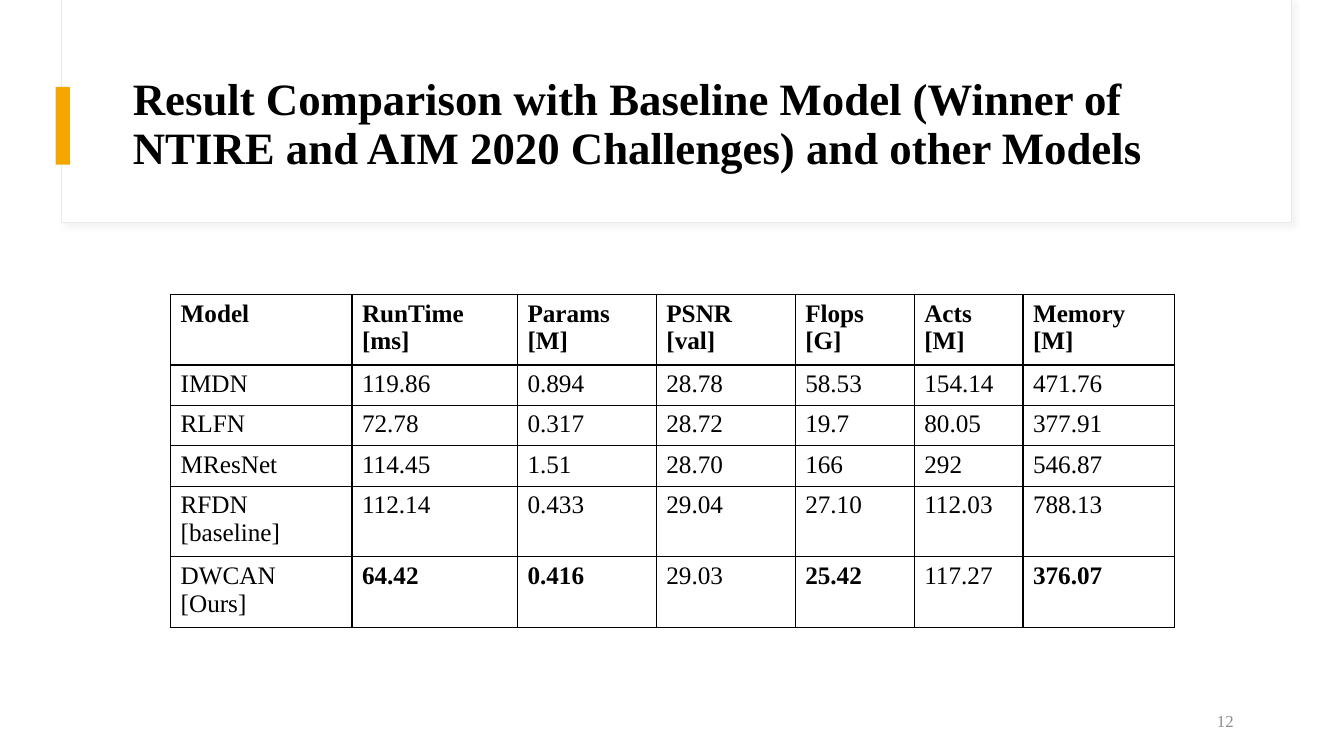
from lxml import etree
from pptx import Presentation
from pptx.dml.color import RGBColor
from pptx.enum.shapes import MSO_SHAPE as Shape
from pptx.enum.text import MSO_ANCHOR as Anchor, PP_ALIGN as Align
from pptx.oxml import parse_xml
from pptx.oxml.ns import nsdecls, qn
from pptx.util import Cm, Pt

# Content
TITLE = ("Result Comparison with Baseline Model (Winner of "
         "NTIRE and AIM 2020 Challenges) and other Models")
PAGE_NUMBER = "12"
RESULTS = [
    ("Model", "RunTime [ms]", "Params [M]", "PSNR [val]", "Flops [G]", "Acts [M]", "Memory [M]"),
    ("IMDN", "119.86", "0.894", "28.78", "58.53", "154.14", "471.76"),
    ("RLFN", "72.78", "0.317", "28.72", "19.7", "80.05", "377.91"),
    ("MResNet", "114.45", "1.51", "28.70", "166", "292", "546.87"),
    ("RFDN [baseline]", "112.14", "0.433", "29.04", "27.10", "112.03", "788.13"),
    ("DWCAN [Ours]", "64.42", "0.416", "29.03", "25.42", "117.27", "376.07"),
]
HIGHLIGHTS = {"64.42", "0.416", "25.42", "376.07"}
COLUMN_WIDTHS = (4.57, 4.17, 3.5, 3.5, 3, 2.74, 3.81)
ROW_HEIGHT = 0.79

FONT = "Times New Roman"
BLACK = RGBColor(0x00, 0x00, 0x00)
WHITE = RGBColor(0xFF, 0xFF, 0xFF)
AMBER = RGBColor(0xF5, 0xA7, 0x00)
PALE_GREY = RGBColor(0xE9, 0xE9, 0xE9)
GREY = RGBColor(0x8C, 0x8C, 0x8C)

PANEL_SHADOW = f"""<a:effectLst {nsdecls('a')}>
  <a:outerShdw blurRad="50800" dist="38100" dir="2700000" algn="tl" rotWithShape="0">
    <a:srgbClr val="D9D9D9"><a:alpha val="30000"/></a:srgbClr>
  </a:outerShdw></a:effectLst>"""


def set_font(paragraph, size, color=BLACK, bold=False):
    font = paragraph.font
    font.name, font.size, font.bold = FONT, Pt(size), bold
    font.color.rgb = color


def add_block(slide, box, fill):
    block = slide.shapes.add_shape(Shape.RECTANGLE, *map(Cm, box))
    block.shadow.inherit = False
    block.fill.solid()
    block.fill.fore_color.rgb = fill
    block.line.fill.background()
    return block


def add_text(slide, box, text, size, color=BLACK, bold=False, align=Align.LEFT):
    frame = slide.shapes.add_textbox(*map(Cm, box)).text_frame
    frame.word_wrap = True
    frame.vertical_anchor = Anchor.MIDDLE
    paragraph = frame.paragraphs[0]
    paragraph.text = text
    paragraph.alignment = align
    set_font(paragraph, size, color, bold)
    return paragraph


def add_borders(cell):
    properties = cell._tc.get_or_add_tcPr()
    for index, side in enumerate(("lnL", "lnR", "lnT", "lnB")):
        border = etree.Element(qn(f"a:{side}"), w=str(Pt(1)))
        fill = etree.SubElement(border, qn("a:solidFill"))
        etree.SubElement(fill, qn("a:srgbClr"), val=str(BLACK))
        properties.insert(index, border)


def add_results(slide):
    table = slide.shapes.add_table(
        len(RESULTS), len(COLUMN_WIDTHS), Cm(4.3), Cm(7.42),
        Cm(sum(COLUMN_WIDTHS)), Cm(ROW_HEIGHT * len(RESULTS))).table
    table.horz_banding = False
    for column, width in zip(table.columns, COLUMN_WIDTHS):
        column.width = Cm(width)
    for r, values in enumerate(RESULTS):
        table.rows[r].height = Cm(ROW_HEIGHT)
        for c, value in enumerate(values):
            cell = table.cell(r, c)
            cell.text = value
            cell.fill.background()
            set_font(cell.text_frame.paragraphs[0], 18, bold=r == 0 or value in HIGHLIGHTS)
            add_borders(cell)


def main():
    deck = Presentation()
    deck.slide_width, deck.slide_height = Cm(33.87), Cm(19.05)
    slide = deck.slides.add_slide(deck.slide_layouts[6])

    # Title panel with its accent bar
    panel = add_block(slide, (1.55, 0, 31.01, 5.62), WHITE)
    panel.line.color.rgb = PALE_GREY
    panel.line.width = Pt(0.75)
    properties = panel._element.spPr
    properties.replace(properties.find(qn("a:effectLst")), parse_xml(PANEL_SHADOW))
    add_block(slide, (1.4, 2.19, 0.36, 1.96), AMBER)
    title = add_text(slide, (3.1, 1.52, 28.24, 3.28), TITLE, 32, bold=True)
    title.line_spacing = 0.9

    # Page number and results
    add_text(slide, (23.72, 17.65, 7.62, 1.02), PAGE_NUMBER, 12, GREY, align=Align.RIGHT)
    add_results(slide)
    deck.save("out.pptx")


if __name__ == "__main__":
    main()
